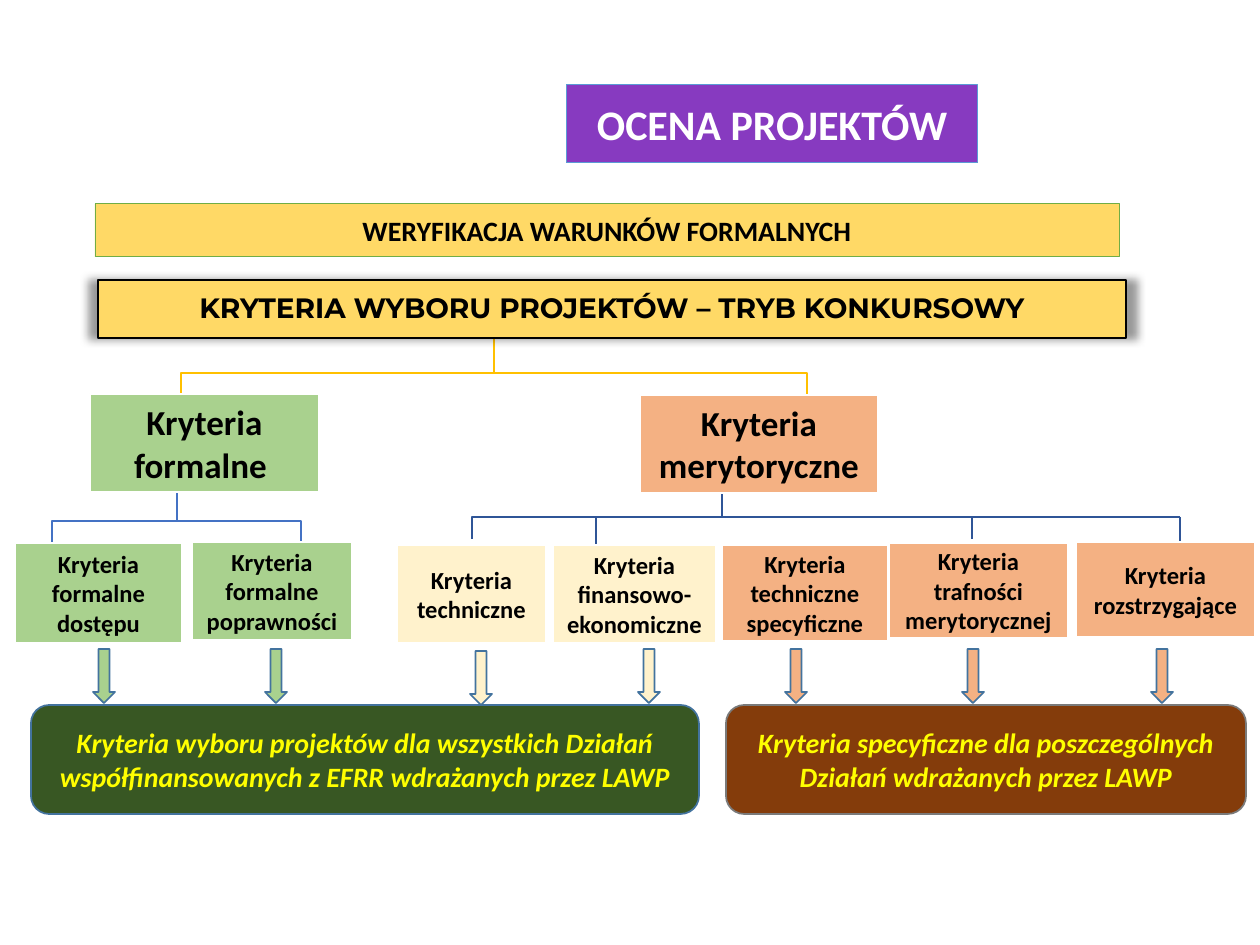
from lxml import etree
from pptx import Presentation
from pptx.dml.color import RGBColor
from pptx.enum.shapes import MSO_CONNECTOR, MSO_SHAPE
from pptx.enum.text import MSO_ANCHOR, PP_ALIGN
from pptx.oxml.ns import qn
from pptx.util import Emu, Pt

PX = 914400 / 126

WHITE = RGBColor(0xFF, 0xFF, 0xFF)
BLACK = RGBColor(0, 0, 0)
YELLOW = RGBColor(0xFF, 0xFF, 0)
PURPLE = RGBColor(0x87, 0x3A, 0xC0)
SKY = RGBColor(0x5B, 0x9B, 0xD5)
GOLD = RGBColor(0xFF, 0xD9, 0x66)
AMBER = RGBColor(0xFF, 0xC0, 0)
LEAF = RGBColor(0x70, 0xAD, 0x47)
GREEN = RGBColor(0xA9, 0xD1, 0x8E)
FOREST = RGBColor(0x38, 0x57, 0x23)
CREAM = RGBColor(0xFF, 0xF2, 0xCC)
ORANGE = RGBColor(0xF4, 0xB1, 0x83)
BROWN = RGBColor(0x84, 0x3C, 0x0B)
BLUE = RGBColor(0x44, 0x72, 0xC4)
NAVY = RGBColor(0x2F, 0x55, 0x97)
STEEL = RGBColor(0x43, 0x73, 0x9E)
GRAY = RGBColor(0x7A, 0x7A, 0x7A)

BRANCHES = [
    (494, 339, 373, 395, (181, 807), AMBER),
    (177, 489, 521, 544, (52, 301), BLUE),
    (722, 484, 517, 539, (472, 972), NAVY),
]
LINKS = [
    (596, 517, 596, 546),
    (968, 517, 1180, 517),
    (1180, 517, 1180, 544),
]
BANNERS = [
    ("OCENA PROJEKTÓW", (566, 85, 412, 78), PURPLE, SKY, 0.5, 24, WHITE),
    ("WERYFIKACJA WARUNKÓW FORMALNYCH", (95, 204, 1024, 53), GOLD, LEAF, 0.5, 16, BLACK),
]
TITLE = ("KRYTERIA WYBORU PROJEKTÓW – TRYB KONKURSOWY", (98, 280, 1028, 58))
CRITERIA = [
    ("Kryteria formalne ", (90, 394, 229, 98), GREEN, 20),
    ("Kryteria merytoryczne", (640, 395, 238, 98), ORANGE, 20),
    ("Kryteria formalne dostępu", (15, 543, 167, 100), GREEN, 14),
    ("Kryteria formalne poprawności", (192, 542, 160, 98), GREEN, 14),
    ("Kryteria techniczne", (397, 545, 149, 98), CREAM, 14),
    ("Kryteria finansowo-ekonomiczne", (553, 545, 163, 98), CREAM, 14),
    ("Kryteria techniczne specyficzne", (722, 545, 166, 96), ORANGE, 14),
    ("Kryteria trafności merytorycznej", (889, 543, 179, 95), ORANGE, 14),
    ("Kryteria rozstrzygające", (1076, 542, 179, 95), ORANGE, 14),
]
ARROWS = [
    (93, 649, GREEN), (265, 649, GREEN), (470, 651, CREAM), (638, 649, CREAM),
    (785, 649, ORANGE), (962, 649, ORANGE), (1151, 649, ORANGE),
]
SCOPES = [
    ("Kryteria wyboru projektów dla wszystkich Działań współfinansowanych z EFRR "
     "wdrażanych przez LAWP", (31, 705, 668, 109), FOREST, STEEL),
    ("Kryteria specyficzne dla poszczególnych Działań wdrażanych przez LAWP",
     (726, 705, 520, 109), BROWN, GRAY),
]


def px(v):
    return Emu(round(v * PX))


def add_box(s, box, fill, line, width=1, kind=MSO_SHAPE.RECTANGLE):
    sp = s.shapes.add_shape(kind, *map(px, box))
    sp.shadow.inherit = False
    sp.fill.solid()
    sp.fill.fore_color.rgb = fill
    sp.line.color.rgb = line
    sp.line.width = Pt(width)
    return sp


def add_text(sp, text, size, color=BLACK, font="Calibri", italic=False, spacing=1.0):
    tf = sp.text_frame
    tf.word_wrap = True
    tf.vertical_anchor = MSO_ANCHOR.MIDDLE
    p = tf.paragraphs[0]
    p.alignment = PP_ALIGN.CENTER
    p.line_spacing = spacing
    r = p.add_run()
    r.text = text
    r.font.name = font
    r.font.size = Pt(size)
    r.font.bold = True
    r.font.italic = italic
    r.font.color.rgb = color


def add_elbow(s, x, top, bus, end_x, bottom, color):
    fb = s.shapes.build_freeform(x, top, scale=PX)
    fb.add_line_segments([(x, bus), (end_x, bus), (end_x, bottom)], close=False)
    sp = fb.convert_to_shape()
    sp.shadow.inherit = False
    sp.fill.background()
    sp.line.color.rgb = color
    sp.line.width = Pt(1)


def add_link(s, ends):
    c = s.shapes.add_connector(MSO_CONNECTOR.STRAIGHT, *map(px, ends))
    c.line.color.rgb = NAVY
    c.line.width = Pt(1)
    etree.SubElement(c._element.spPr, qn("a:effectLst"))


def add_glow_shadow(sp):
    effects = sp._element.spPr.find(qn("a:effectLst"))
    shadow = etree.SubElement(effects, qn("a:outerShdw"), blurRad="63500", sx="102000",
                              sy="102000", algn="ctr", rotWithShape="0")
    color = etree.SubElement(shadow, qn("a:srgbClr"), val="000000")
    etree.SubElement(color, qn("a:alpha"), val="40000")


def main():
    prs = Presentation()
    prs.slide_width, prs.slide_height = px(1260), px(945)
    s = prs.slides.add_slide(prs.slide_layouts[6])

    for x, top, bus, bottom, ends, color in BRANCHES:
        for end_x in ends:
            add_elbow(s, x, top, bus, end_x, bottom, color)
    for ends in LINKS:
        add_link(s, ends)

    for text, box, fill, line, width, size, color in BANNERS:
        add_text(add_box(s, box, fill, line, width), text, size, color)
    for text, box, fill, size in CRITERIA:
        add_text(add_box(s, box, fill, WHITE), text, size)
    for text, box, fill, line in SCOPES:
        sp = add_box(s, box, fill, line, kind=MSO_SHAPE.ROUNDED_RECTANGLE)
        add_text(sp, text, 16, YELLOW, italic=True)
    for x, y, fill in ARROWS:
        add_box(s, (x, y, 22, 54), fill, STEEL, kind=MSO_SHAPE.DOWN_ARROW)

    text, box = TITLE
    sp = add_box(s, box, GOLD, BLACK, 0.75)
    add_glow_shadow(sp)
    add_text(sp, text, 16, font="Montserrat", spacing=0.9)

    prs.save("out.pptx")


if __name__ == "__main__":
    main()
